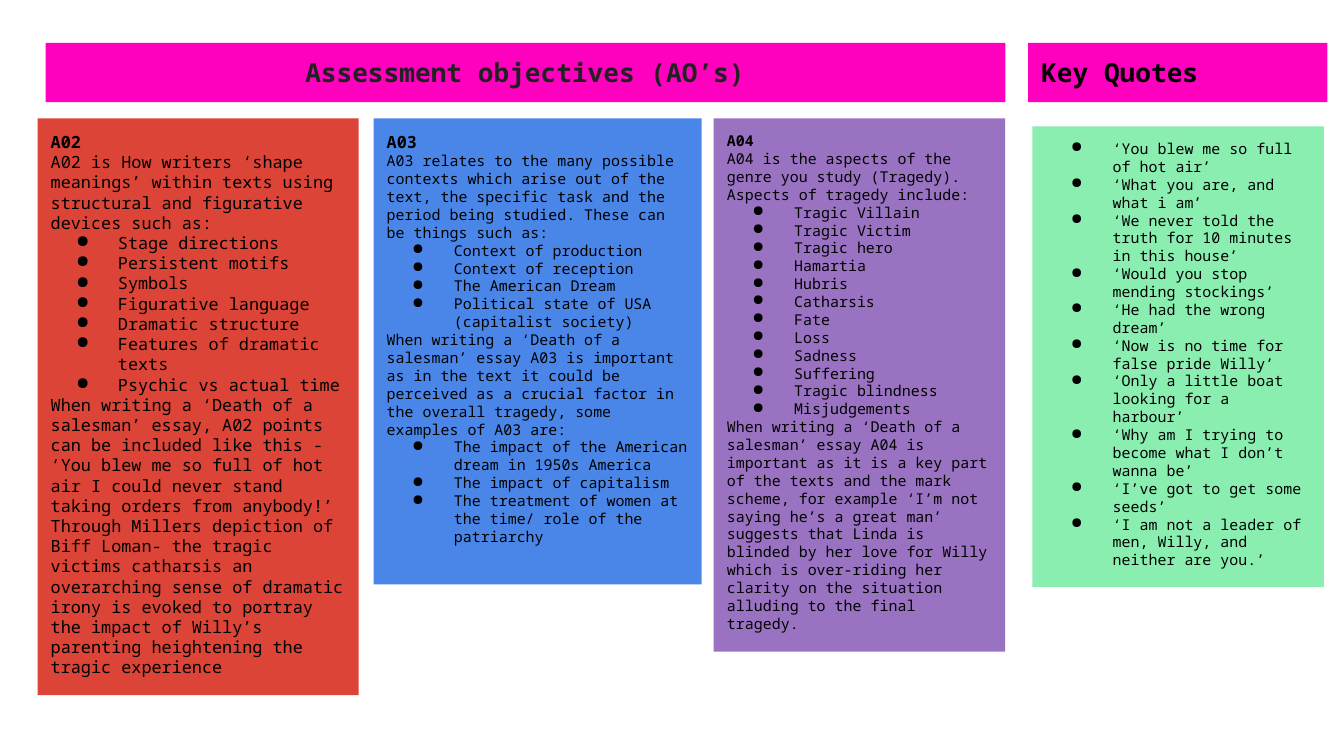
import lxml.etree
import pptx
import pptx.dml.color
import pptx.enum.shapes
import pptx.enum.text
import pptx.oxml.ns
import pptx.util

Cm = pptx.util.Cm
Pt = pptx.util.Pt
RGBColor = pptx.dml.color.RGBColor
AutoSize = pptx.enum.text.MSO_AUTO_SIZE
Align = pptx.enum.text.PP_ALIGN

FONT = "Noto Sans Mono"
BLACK = RGBColor(0x00, 0x00, 0x00)
CHARCOAL = RGBColor(0x21, 0x21, 0x21)
PINK = RGBColor(0xFF, 0x00, 0xBF)
RED = RGBColor(0xDB, 0x44, 0x37)
BLUE = RGBColor(0x4A, 0x86, 0xE8)
PURPLE = RGBColor(0x9A, 0x72, 0xC2)
GREEN = RGBColor(0x89, 0xEE, 0xB0)

INSET = Cm(0.25)
BULLET_INDENT = Cm(1.27)
BULLET_HANG = Cm(-0.79)
BANNER_TOP, BANNER_HEIGHT = 0.81, 1.12
PANEL_TOP = 2.24

OBJECTIVES = [
    {
        "left": 0.71, "width": 6.07, "height": 10.9, "fill": RED,
        "heading": "A02", "heading_size": 9, "body_size": 9,
        "body": [
            "A02 is How writers ‘shape meanings’ within texts using structural "
            "and figurative devices such as:",
            ["Stage directions", "Persistent motifs", "Symbols",
             "Figurative language", "Dramatic structure",
             "Features of dramatic texts", "Psychic vs actual time"],
            "When writing a ‘Death of a salesman’ essay, A02 points can be "
            "included like this - ‘You blew me so full of hot air I could never "
            "stand taking orders from anybody!’ Through Millers depiction of "
            "Biff Loman- the tragic victims catharsis an overarching sense of "
            "dramatic irony is evoked to portray the impact of Willy’s "
            "parenting heightening the tragic experience",
        ],
    },
    {
        "left": 7.06, "width": 6.2, "height": 8.81, "fill": BLUE,
        "heading": "A03", "heading_size": 9, "body_size": 8,
        "body": [
            "A03 relates to the many possible contexts which arise out of the "
            "text, the specific task and the period being studied. These can "
            "be things such as:",
            ["Context of production", "Context of reception",
             "The American Dream",
             "Political state of USA (capitalist society)"],
            "When writing a ‘Death of a salesman’ essay A03 is important as in "
            "the text it could be perceived as a crucial factor in the overall "
            "tragedy, some examples of A03 are:",
            ["The impact of the American dream in 1950s America",
             "The impact of capitalism",
             "The treatment of women at the time/ role of the patriarchy"],
        ],
    },
    {
        "left": 13.49, "width": 5.51, "height": 10.08, "fill": PURPLE,
        "heading": "A04", "heading_size": 8, "body_size": 8,
        "body": [
            "A04 is the aspects of the genre you study (Tragedy). Aspects of "
            "tragedy include:",
            ["Tragic Villain", "Tragic Victim", "Tragic hero", "Hamartia",
             "Hubris", "Catharsis", "Fate", "Loss", "Sadness", "Suffering",
             "Tragic blindness", "Misjudgements"],
            "When writing a ‘Death of a salesman’ essay A04 is important as it "
            "is a key part of the texts and the mark scheme, for example ‘I’m "
            "not saying he’s a great man’ suggests that Linda is blinded by "
            "her love for Willy which is over-riding her clarity on the "
            "situation alluding to the final tragedy.",
        ],
    },
]

QUOTES = [
    "‘You blew me so full of hot air’",
    "‘What you are, and what i am’",
    "‘We never told the truth for 10 minutes in this house’",
    "‘Would you stop mending stockings’",
    "‘He had the wrong dream’",
    "‘Now is no time for false pride Willy’",
    "‘Only a little boat looking for a harbour’",
    "‘Why am I trying to become what I don’t wanna be’",
    "‘I’ve got to get some seeds’",
    "‘I am not a leader of men, Willy, and neither are you.’",
]


def prepare_frame(shape, fill, auto_size):
    shape.fill.solid()
    shape.fill.fore_color.rgb = fill
    frame = shape.text_frame
    frame.word_wrap = True
    frame.auto_size = auto_size
    frame.vertical_anchor = pptx.enum.text.MSO_ANCHOR.TOP
    frame.margin_left = frame.margin_right = INSET
    frame.margin_top = frame.margin_bottom = INSET
    return frame


def add_box(page, box, fill):
    shape = page.shapes.add_shape(
        pptx.enum.shapes.MSO_SHAPE.RECTANGLE, *map(Cm, box))
    shape.shadow.inherit = False
    shape.line.fill.background()
    return prepare_frame(shape, fill, AutoSize.SHAPE_TO_FIT_TEXT)


def write(para, text, size, bold=False, color=BLACK, align=Align.LEFT):
    para.text = text
    para.alignment = align
    para.font.name = FONT
    para.font.size = Pt(size)
    para.font.bold = bold
    para.font.color.rgb = color


def add_bullet(para):
    properties = para._p.get_or_add_pPr()
    properties.set("marL", str(BULLET_INDENT))
    properties.set("indent", str(BULLET_HANG))
    qn = pptx.oxml.ns.qn
    bullet = lxml.etree.Element(qn("a:buChar"), char="●")
    properties.insert(0, bullet)


def write_body(frame, body, size, first=None):
    for block in body:
        bulleted = isinstance(block, list)
        for text in block if bulleted else [block]:
            para = first if first is not None else frame.add_paragraph()
            first = None
            write(para, text, size)
            if bulleted:
                add_bullet(para)


def place_title(page, box, text):
    title = page.shapes.title
    title.left, title.top, title.width, title.height = map(Cm, box)
    frame = prepare_frame(title, PINK, AutoSize.NONE)
    write(frame.paragraphs[0], text, 14, True, CHARCOAL, Align.CENTER)


def place_quotes_banner(page, box, text):
    frame = add_box(page, box, PINK)
    write(frame.paragraphs[0], text, 14, True)


def place_objective(page, box, objective):
    frame = add_box(page, box, objective["fill"])
    write(frame.paragraphs[0], objective["heading"],
          objective["heading_size"], True)
    write_body(frame, objective["body"], objective["body_size"])


def place_quotes(page, box, quotes):
    frame = add_box(page, box, GREEN)
    write_body(frame, [quotes], 8, frame.paragraphs[0])


def main():
    deck = pptx.Presentation()
    deck.slide_width, deck.slide_height = Cm(25.4), Cm(14.29)
    page = deck.slides.add_slide(deck.slide_layouts.get_by_name("Title Only"))

    place_title(page, (0.86, BANNER_TOP, 18.14, BANNER_HEIGHT),
                "Assessment objectives (AO’s)")
    for objective in OBJECTIVES:
        box = (objective["left"], PANEL_TOP,
               objective["width"], objective["height"])
        place_objective(page, box, objective)
    place_quotes_banner(page, (19.43, BANNER_TOP, 5.66, BANNER_HEIGHT),
                        "Key Quotes")
    place_quotes(page, (19.51, 2.39, 5.51, 8.71), QUOTES)

    deck.save("out.pptx")


if __name__ == "__main__":
    main()
